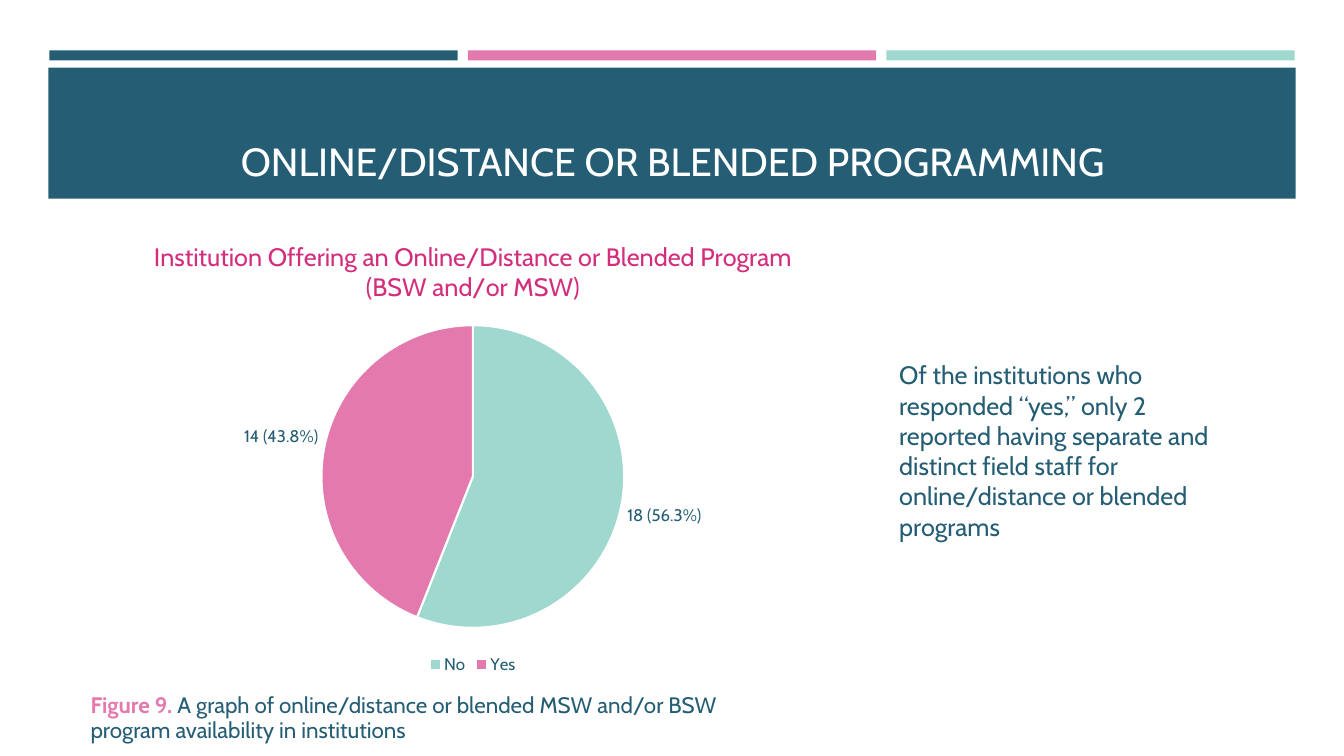
from pptx import Presentation
from pptx.chart.data import CategoryChartData
from pptx.dml.color import RGBColor
from pptx.enum.chart import XL_CHART_TYPE, XL_LABEL_POSITION, XL_LEGEND_POSITION
from pptx.enum.shapes import MSO_SHAPE
from pptx.enum.text import MSO_ANCHOR, MSO_AUTO_SIZE, PP_ALIGN
from pptx.oxml import parse_xml
from pptx.util import Inches, Pt

PIE = XL_CHART_TYPE.PIE
OUTSIDE_END = XL_LABEL_POSITION.OUTSIDE_END
LEGEND_BOTTOM = XL_LEGEND_POSITION.BOTTOM
RECTANGLE = MSO_SHAPE.RECTANGLE
TOP, MIDDLE, BOTTOM = MSO_ANCHOR.TOP, MSO_ANCHOR.MIDDLE, MSO_ANCHOR.BOTTOM
NO_AUTOFIT = MSO_AUTO_SIZE.NONE
CENTER = PP_ALIGN.CENTER

FONT = "Cabin"
TEAL, PINK, MINT = "255E74", "E379AC", "9ED8CF"
MAGENTA, WHITE = "D32D7C", "FFFFFF"

SLICES = [
    ("No", 56, "18 (56.3%)", MINT),
    ("Yes", 44, "14 (43.8%)", PINK),
]

PIE_LAYOUT = """
<c:layout xmlns:c="http://schemas.openxmlformats.org/drawingml/2006/chart">
  <c:manualLayout>
    <c:layoutTarget val="inner"/><c:xMode val="edge"/><c:yMode val="edge"/>
    <c:x val="0.32"/><c:y val="0.23"/><c:w val="0.36"/><c:h val="0.66"/>
  </c:manualLayout>
</c:layout>"""


def color(value):
    return RGBColor.from_string(value)


def style_font(font, size, hex_color, bold=False):
    font.name = FONT
    font.size = Pt(size)
    font.bold = bold
    font.color.rgb = color(hex_color)


def add_bar(page, left, top, width, height, fill):
    bar = page.shapes.add_shape(
        RECTANGLE, Inches(left), Inches(top), Inches(width), Inches(height))
    bar.shadow.inherit = False
    bar.fill.solid()
    bar.fill.fore_color.rgb = color(fill)
    bar.line.fill.background()


def place_title(page, text):
    title = page.shapes.title
    title.left, title.top = Inches(0.64), Inches(0.77)
    title.width, title.height = Inches(12.06), Inches(1.11)
    frame = title.text_frame
    frame.text = text
    frame.auto_size = NO_AUTOFIT
    frame.vertical_anchor = BOTTOM
    para = frame.paragraphs[0]
    para.alignment = CENTER
    style_font(para.runs[0].font, 28, WHITE)
    title.element.getparent().append(title.element)


def add_text(page, left, top, width, height, size, spans, anchor=TOP):
    box = page.shapes.add_textbox(
        Inches(left), Inches(top), Inches(width), Inches(height))
    frame = box.text_frame
    frame.word_wrap = True
    frame.vertical_anchor = anchor
    para = frame.paragraphs[0]
    for text, hex_color, bold in spans:
        span = para.add_run()
        span.text = text
        style_font(span.font, size, hex_color, bold)
    return para


def add_pie(page, left, top, width, height, title):
    data = CategoryChartData()
    data.categories = [name for name, *_ in SLICES]
    data.add_series("Series 1", [value for _, value, *_ in SLICES])
    chart = page.shapes.add_chart(
        PIE, Inches(left), Inches(top), Inches(width), Inches(height), data).chart
    style_font(chart.font, 12, TEAL)

    chart.has_title = True
    chart.chart_title.include_in_layout = False
    title_frame = chart.chart_title.text_frame
    title_frame.text = title
    style_font(title_frame.paragraphs[0].runs[0].font, 18, MAGENTA)

    chart.has_legend = True
    chart.legend.position = LEGEND_BOTTOM
    chart.legend.include_in_layout = False
    style_font(chart.legend.font, 12, TEAL)

    plot = chart.plots[0]
    plot.vary_by_categories = True
    for index, (_, _, label_text, fill) in enumerate(SLICES):
        point = plot.series[0].points[index]
        point.format.fill.solid()
        point.format.fill.fore_color.rgb = color(fill)
        point.format.line.color.rgb = color(WHITE)
        point.format.line.width = Pt(1.5)
        label = point.data_label
        label.text_frame.text = label_text
        style_font(label.text_frame.paragraphs[0].runs[0].font, 12, TEAL)
        label.position = OUTSIDE_END

    plot_area = chart.element.chart.plotArea
    for layout in plot_area.xpath("c:layout"):
        plot_area.remove(layout)
    plot_area.insert(0, parse_xml(PIE_LAYOUT))


def main():
    deck = Presentation()
    deck.slide_width, deck.slide_height = Inches(13.33), Inches(7.5)
    page = deck.slides.add_slide(deck.slide_layouts[5])

    for index, fill in enumerate((TEAL, PINK, MINT)):
        add_bar(page, 0.49 + 4.15 * index, 0.5, 4.05, 0.1, fill)
    add_bar(page, 0.48, 0.67, 12.37, 1.3, TEAL)
    place_title(page, "ONLINE/DISTANCE OR BLENDED PROGRAMMING")

    add_pie(page, 0.5, 2.18, 8.38, 4.55,
            "Institution Offering an Online/Distance or Blended Program "
            "(BSW and/or MSW)")
    add_text(page, 8.82, 3.52, 3.41, 1.92, 18, [
        ("Of the institutions who responded “yes,” only 2 reported having "
         "separate and distinct field staff for online/distance or blended "
         "programs", TEAL, False)])
    caption = add_text(page, 0.8, 6.84, 7.17, 0.58, 16, [
        ("Figure 9. ", PINK, True),
        ("A graph of online/distance or blended MSW and/or BSW program "
         "availability in institutions", TEAL, False)], MIDDLE)
    caption.line_spacing = 0.9
    caption.space_after = Pt(6)

    deck.save("out.pptx")


if __name__ == "__main__":
    main()
